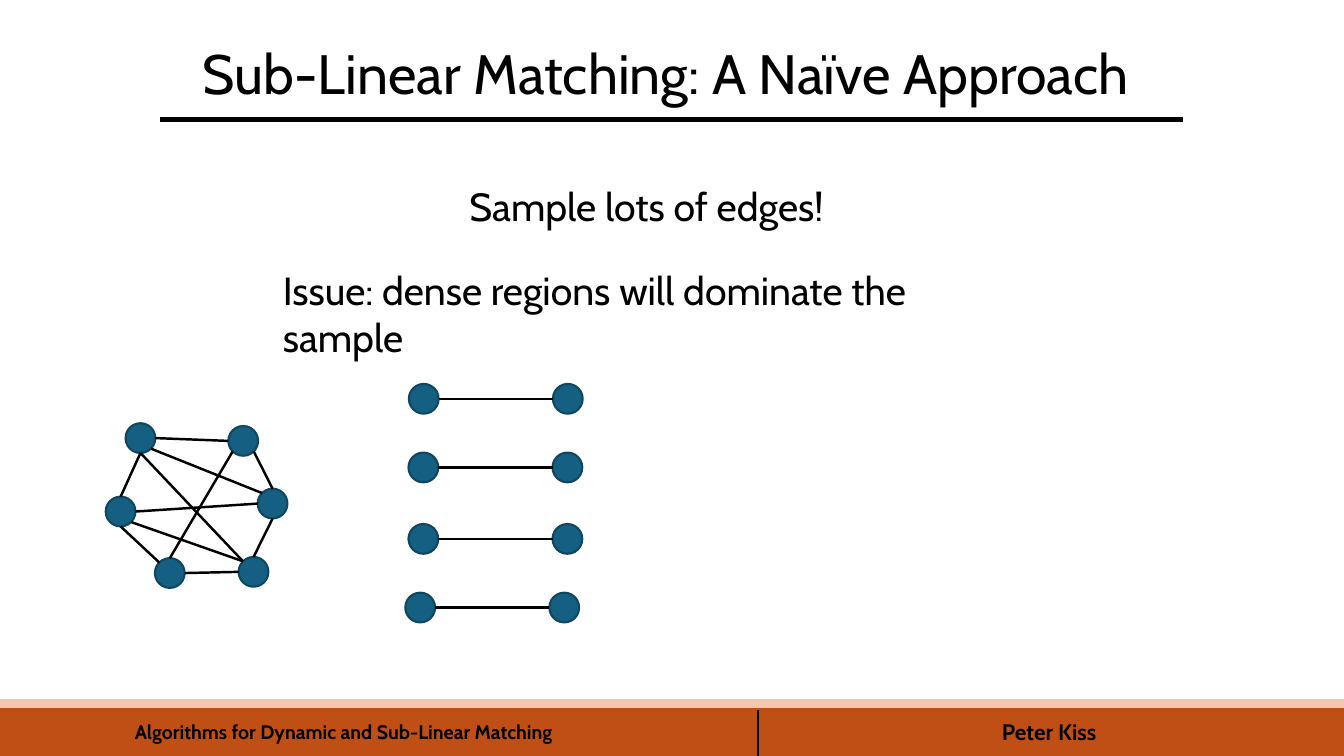
from math import cos, sin, radians
from pptx import Presentation
from pptx.dml.color import RGBColor
from pptx.enum.shapes import MSO_CONNECTOR as Link, MSO_SHAPE as Form
from pptx.enum.text import MSO_ANCHOR as Anchor, PP_ALIGN as Align
from pptx.oxml.ns import qn
from pptx.util import Cm, Pt
from lxml.etree import SubElement

BLACK = RGBColor(0x00, 0x00, 0x00)
PEACH = RGBColor(0xF6, 0xC6, 0xAD)
RUST = RGBColor(0xC0, 0x4F, 0x15)
TEAL = RGBColor(0x15, 0x60, 0x82)
DEEP = RGBColor(0x10, 0x47, 0x60)

# Content, lengths in cm
WIDE, HIGH = 33.87, 19.05
TITLE = "Sub-Linear Matching: A Naïve Approach"
TITLE_BOX = (3.3, 0.97, 26.95, 1.85)
LEFT = {"align": Align.LEFT, "space": 1.0, "anchor": Anchor.TOP}
NOTES = [  # text, box, size, bold, format
    ("Sample lots of edges!", (11.58, 4.47, 9.75, 1.45), 28, False, LEFT),
    ("Issue: dense regions will dominate the sample",
     (6.88, 6.58, 19.13, 1.45), 28, False, LEFT),
    ("Algorithms for Dynamic and Sub-Linear Matching",
     (0.08, 17.88, 17.17, 0.99), 14, True,
     {"align": Align.CENTER, "space": 0.9, "anchor": Anchor.BOTTOM}),
    ("Peter Kiss", (19.1, 17.98, 14.68, 0.94), 16, True,
     {"align": Align.CENTER, "space": 1.0, "anchor": Anchor.TOP}),
]
BARS = [(17.63, 0.25, PEACH), (17.88, 1.17, RUST)]  # top, height, colour
RULES = [((4.04, 3.02), (29.82, 3.02), 3.75),
         ((19.1, 19.05), (19.1, 17.88), 1)]

# Dense graph: node centres, then edges with the compass side at each end
NODES = {"A": (3.54, 11.04), "B": (6.13, 11.11), "C": (6.87, 12.69),
         "D": (6.39, 14.41), "E": (4.28, 14.44), "F": (3.04, 12.89)}
EDGES = ["A e B w", "B se C n", "F e C w", "A se C nw", "A s F n", "E e D w",
         "C s D n", "E nw F s", "A s D nw", "B sw E n", "F se D nw"]
# Sparse graph: centre of the left node in each pair
PAIRS = [(10.68, 10.05), (10.67, 11.78), (10.67, 13.58), (10.59, 15.31)]
GAP = 3.63
SIZE = 0.75
SIDES = ["e", "se", "s", "sw", "w", "nw", "n", "ne"]

deck = Presentation()
deck.slide_width, deck.slide_height = Cm(WIDE), Cm(HIGH)
slide = deck.slides.add_slide(deck.slide_layouts[5])
shapes = slide.shapes


def write(box, text, size, bold, style):
    frame = box.text_frame
    frame.word_wrap = True
    frame.vertical_anchor = style["anchor"]
    para = frame.paragraphs[0]
    para.alignment, para.line_spacing = style["align"], style["space"]
    run = para.add_run()
    run.text = text
    for key, value in {"name": "Cabin", "size": Pt(size), "bold": bold}.items():
        setattr(run.font, key, value)
    run.font.color.rgb = BLACK


def draw(form, place, fill, edge):
    shape = shapes.add_shape(form, *map(Cm, place))
    shape.shadow.inherit = False
    shape.fill.solid()
    shape.fill.fore_color.rgb = fill
    shape.line.color.rgb = edge
    shape.line.width = Pt(1.5)


def node(x, y):
    draw(Form.OVAL, (x - SIZE / 2, y - SIZE / 2, SIZE, SIZE), TEAL, DEEP)


def rim(spot, side):
    turn = radians(45 * SIDES.index(side))
    return spot[0] + SIZE / 2 * cos(turn), spot[1] + SIZE / 2 * sin(turn)


def rule(start, end, width=1.75):
    line = shapes.add_connector(Link.STRAIGHT, *map(Cm, start + end))
    line.line.color.rgb = BLACK
    line.line.width = Pt(width)
    SubElement(line._element.spPr, qn("a:effectLst"))


# Title
title = shapes.title
title.left, title.top, title.width, title.height = map(Cm, TITLE_BOX)
write(title, TITLE, 39.6, False,
      {"align": Align.CENTER, "space": 0.9, "anchor": Anchor.BOTTOM})

# Footer bars, text and rules
for top, tall, tint in BARS:
    draw(Form.RECTANGLE, (0, top, WIDE, tall), tint, tint)
for text, place, size, bold, style in NOTES:
    write(shapes.add_textbox(*map(Cm, place)), text, size, bold, style)
for start, end, width in RULES:
    rule(start, end, width)

# Dense graph
for spot in NODES.values():
    node(*spot)
for edge in EDGES:
    a, out, b, into = edge.split()
    rule(rim(NODES[a], out), rim(NODES[b], into))

# Sparse graph
for x, y in PAIRS:
    mate = (x + GAP, y)
    node(x, y)
    node(*mate)
    rule(rim((x, y), "e"), rim(mate, "w"))

deck.save("out.pptx")
